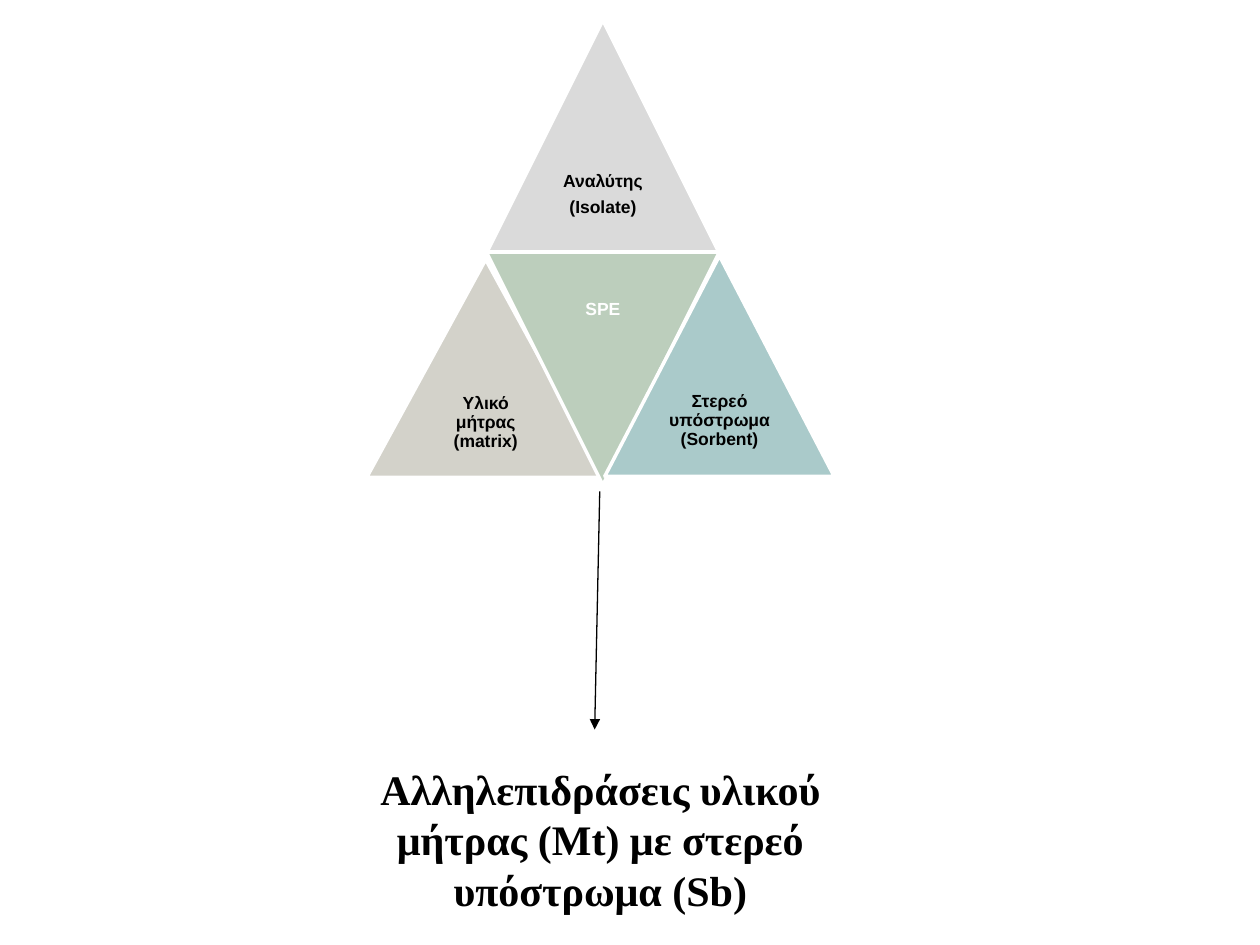
from dataclasses import dataclass

from lxml.etree import SubElement
from pptx import Presentation
from pptx.dml.color import RGBColor
from pptx.enum.shapes import MSO_CONNECTOR as Connector, MSO_SHAPE as Preset
from pptx.enum.text import MSO_ANCHOR as Anchor, MSO_AUTO_SIZE as AutoSize, PP_ALIGN as Align
from pptx.oxml.ns import qn
from pptx.shapes.shapetree import GroupShapes
from pptx.slide import Slide
from pptx.text.text import TextFrame
from pptx.util import Emu, Pt

BLACK = RGBColor(0x00, 0x00, 0x00)
WHITE = RGBColor(0xFF, 0xFF, 0xFF)
GREY = RGBColor(0xDA, 0xDA, 0xDA)
BEIGE = RGBColor(0xD3, 0xD2, 0xCA)
GREEN = RGBColor(0xBC, 0xCE, 0xBC)
TEAL = RGBColor(0xAA, 0xCA, 0xCA)
EMU_PER_PX = 9144


@dataclass(frozen=True)
class Triangle:
    left: int
    top: int
    width: int
    height: int
    fill: RGBColor
    lines: tuple[str, ...]
    ink: RGBColor = BLACK
    inverted: bool = False


TRIANGLES = (
    Triangle(386, 16, 185, 185, GREY, ("Αναλύτης", "(Isolate)")),
    Triangle(291, 206, 189, 173, BEIGE, ("Υλικό μήτρας (matrix)",)),
    Triangle(386, 200, 185, 185, GREEN, ("SPE",), WHITE, True),
    Triangle(480, 203, 182, 175, TEAL, ("Στερεό υπόστρωμα (Sorbent)",)),
)


def px(length: float) -> Emu:
    """Turn px into EMU."""
    return Emu(round(length * EMU_PER_PX))


def write(frame: TextFrame, lines: tuple[str, ...], font: str, size: int, ink: RGBColor) -> None:
    """Fill a frame with centred bold paragraphs."""
    frame.word_wrap = True
    frame.auto_size = AutoSize.NONE
    frame.vertical_anchor = Anchor.MIDDLE
    frame.text = "\n".join(lines)
    for para in frame.paragraphs:
        para.alignment = Align.CENTER
        para.font.name = font
        para.font.size = Pt(size)
        para.font.bold = True
        para.font.color.rgb = ink


def draw_triangle(shapes: GroupShapes, item: Triangle) -> None:
    """Draw a triangle with its label in the inner half-size box."""
    shape = shapes.add_shape(Preset.ISOSCELES_TRIANGLE, px(item.left), px(item.top),
                             px(item.width), px(item.height))
    shape.shadow.inherit = False
    shape.rotation = 180 if item.inverted else 0
    shape.fill.solid()
    shape.fill.fore_color.rgb = item.fill
    shape.line.color.rgb = WHITE
    shape.line.width = Pt(2)

    label_top = item.top if item.inverted else item.top + item.height / 2
    box = shapes.add_textbox(px(item.left + item.width / 4), px(label_top),
                             px(item.width / 2), px(item.height / 2))
    frame = box.text_frame
    frame.margin_left = frame.margin_right = frame.margin_top = frame.margin_bottom = px(4)
    write(frame, item.lines, "Arial", 10, item.ink)
    for para in frame.paragraphs:
        para.line_spacing = 0.9
        para.space_after = Pt(4)


def draw_arrow(page: Slide, start: tuple[int, int], end: tuple[int, int]) -> None:
    """Draw a thin black arrow from start to end."""
    arrow = page.shapes.add_connector(Connector.STRAIGHT, *map(px, start + end))
    arrow.line.color.rgb = BLACK
    arrow.line.width = Pt(0.75)
    SubElement(arrow.line._get_or_add_ln(), qn("a:tailEnd"), type="triangle")
    SubElement(arrow._element.spPr, qn("a:effectLst"))


def main() -> None:
    """Build the slide and save it."""
    deck = Presentation()
    deck.slide_width, deck.slide_height = px(1000), px(750)
    page = deck.slides.add_slide(deck.slide_layouts.get_by_name("Title Only"))
    title = page.shapes.title
    title.left, title.top, title.width, title.height = map(px, (289, 595, 375, 142))
    write(title.text_frame, ("Αλληλεπιδράσεις υλικού μήτρας (Mt) με στερεό υπόστρωμα (Sb)",),
          "Times New Roman", 24, BLACK)
    draw_arrow(page, (476, 390), (472, 579))
    pyramid = page.shapes.add_group_shape()
    for item in TRIANGLES:
        draw_triangle(pyramid.shapes, item)
    deck.save("out.pptx")


if __name__ == "__main__":
    main()
